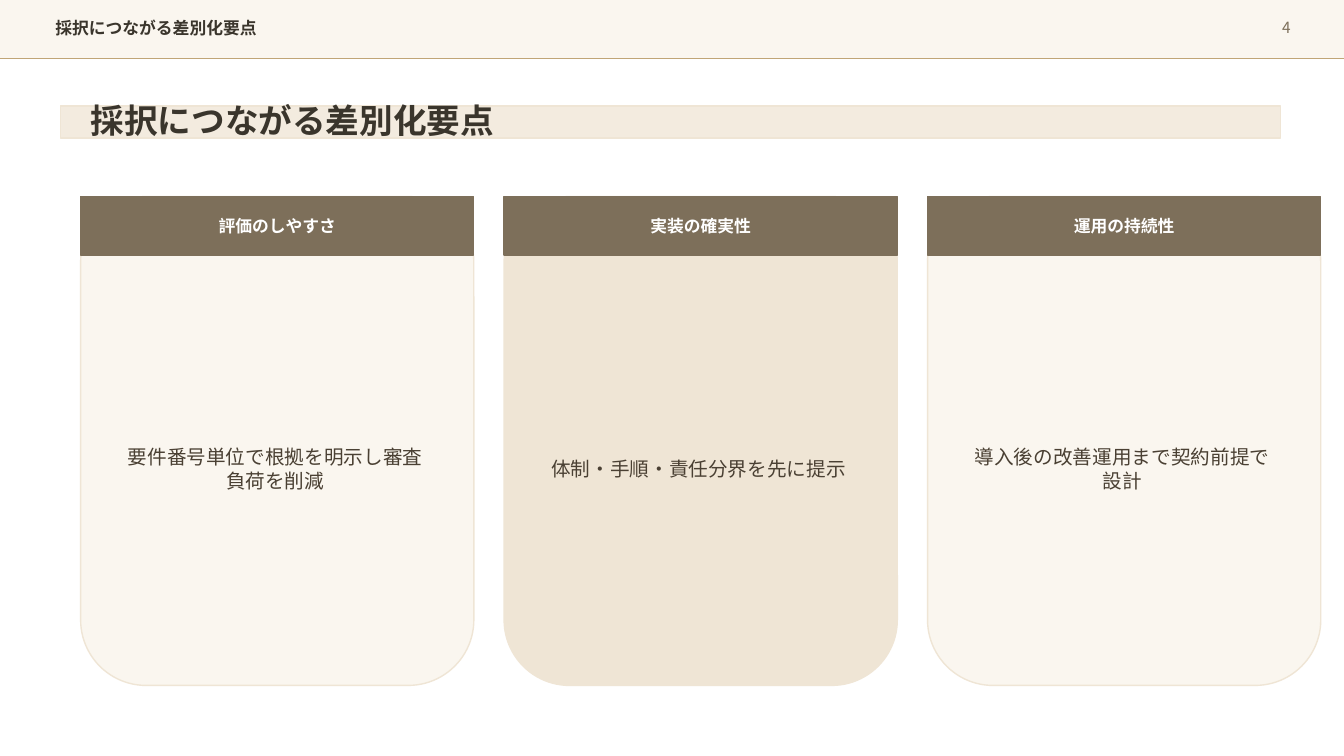
from dataclasses import dataclass

from lxml import etree
from pptx import Presentation
from pptx.dml.color import RGBColor
from pptx.enum.shapes import MSO_CONNECTOR, MSO_SHAPE
from pptx.enum.text import MSO_ANCHOR, MSO_AUTO_SIZE, PP_ALIGN
from pptx.oxml.ns import qn
from pptx.util import Inches, Pt


@dataclass(frozen=True)
class Theme:
    cream: str = "FAF6EF"
    sand: str = "EFE5D5"
    gold: str = "C0A577"
    brown: str = "7D6F5A"
    ink: str = "3A352C"
    body: str = "4A4033"
    white: str = "FFFFFF"
    sans: str = "Noto Sans CJK JP"
    serif: str = "Times New Roman"
    title_size: int = 24
    body_size: int = 14
    label_size: int = 12
    page_size: int = 11


T = Theme()
TITLE = "採択につながる差別化要点"

prs = Presentation()
prs.slide_width, prs.slide_height = Inches(13.33), Inches(7.5)
s = prs.slides.add_slide(prs.slide_layouts[5])


def add_box(kind, box, fill, line):
    sp = s.shapes.add_shape(kind, *map(Inches, box))
    sp.shadow.inherit = False
    sp.fill.solid()
    sp.fill.fore_color.rgb = RGBColor.from_string(fill)
    sp.line.color.rgb = RGBColor.from_string(line)
    sp.line.width = Pt(1)
    return sp


def put_text(box, text, size, color, bold=False, align=PP_ALIGN.LEFT, font=T.sans, sp=None):
    sp = sp or s.shapes.add_textbox(0, 0, 0, 0)
    sp.left, sp.top, sp.width, sp.height = map(Inches, box)
    tf = sp.text_frame
    tf.word_wrap = True
    tf.auto_size = MSO_AUTO_SIZE.NONE
    tf.vertical_anchor = MSO_ANCHOR.MIDDLE
    p = tf.paragraphs[0]
    p.text = text
    p.alignment = align
    p.font.name, p.font.size, p.font.bold = font, Pt(size), bold
    p.font.color.rgb = RGBColor.from_string(color)


# Translucent title band
band = add_box(MSO_SHAPE.RECTANGLE, (0.6, 1.05, 12.1, 0.32), T.sand, T.sand)
band_color = band.fill._xPr.find(qn("a:solidFill"))[0]
etree.SubElement(band_color, qn("a:alpha"), val="75000")

# Header strip with rule, running title and page number
add_box(MSO_SHAPE.RECTANGLE, (0, 0, 13.33, 0.58), T.cream, T.cream)
rule = s.shapes.add_connector(
    MSO_CONNECTOR.STRAIGHT, 0, Inches(0.58), prs.slide_width, Inches(0.58))
rule.line.color.rgb = RGBColor.from_string(T.gold)
rule.line.width = Pt(1)
etree.SubElement(rule.element.spPr, qn("a:effectLst"))
put_text((0.45, 0.15, 9.3, 0.26), TITLE, T.label_size, T.ink, bold=True)
put_text((12.2, 0.14, 0.7, 0.26), "4", T.page_size, T.brown, align=PP_ALIGN.RIGHT)

# Title, brought in front of its band
title = s.shapes.title
title.element.getparent().append(title.element)
put_text((0.8, 0.95, 11.4, 0.48), TITLE, T.title_size, T.ink, bold=True,
         font=T.serif, sp=title)

# Three cards
cards = [
    ("評価のしやすさ", "要件番号単位で根拠を明示し審査負荷を削減", T.cream),
    ("実装の確実性", "体制・手順・責任分界を先に提示", T.sand),
    ("運用の持続性", "導入後の改善運用まで契約前提で設計", T.cream),
]
card_w, gap, top = 3.9, 0.3, 1.95
for i, (heading, message, fill) in enumerate(cards):
    x = 0.8 + i * (card_w + gap)
    add_box(MSO_SHAPE.ROUNDED_RECTANGLE, (x, top, card_w, 4.85), fill, T.sand)
    add_box(MSO_SHAPE.RECTANGLE, (x, top, card_w, 0.58), T.brown, T.brown)
    put_text((x + 0.2, 2.12, 3.5, 0.24), heading, T.label_size, T.white,
             bold=True, align=PP_ALIGN.CENTER)
    put_text((x + 0.28, 2.9, 3.3, 3.5), message, T.body_size, T.body,
             align=PP_ALIGN.CENTER)

prs.save("out.pptx")
